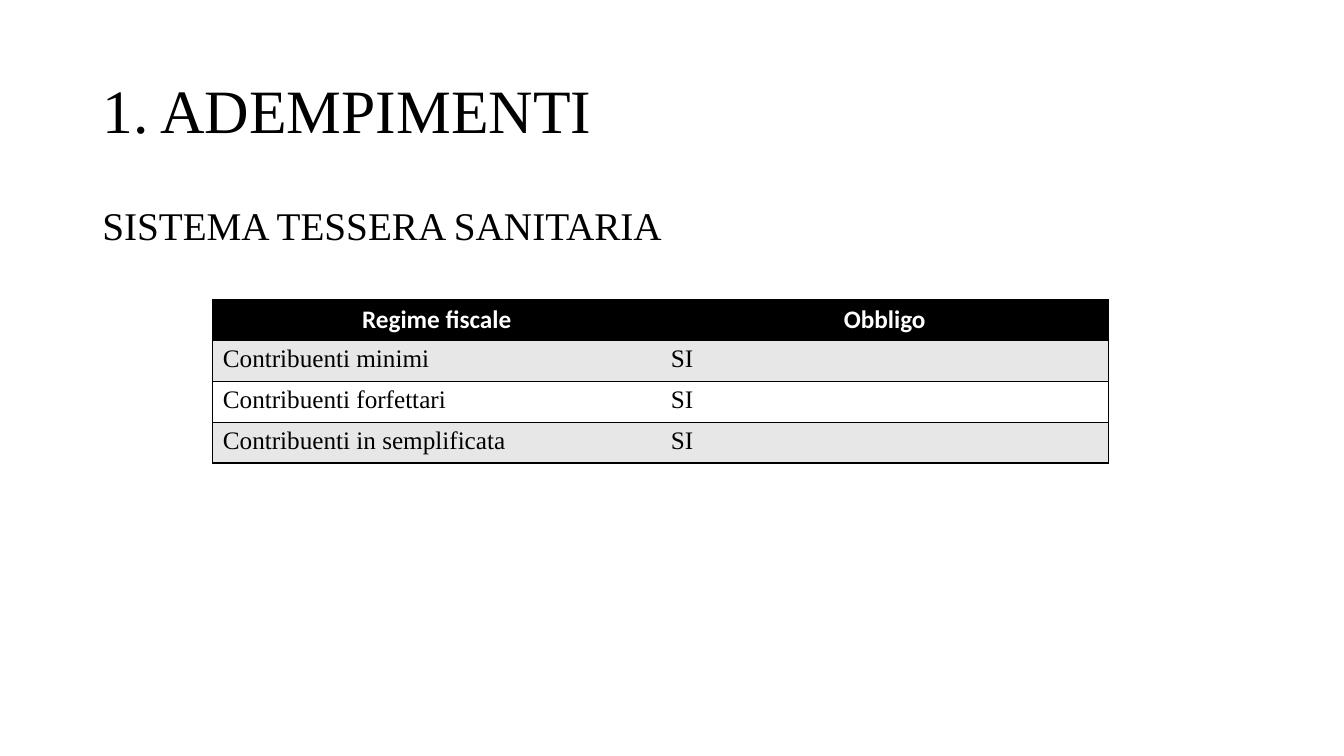
from dataclasses import dataclass

from lxml.etree import SubElement
from pptx import Presentation
from pptx.dml.color import RGBColor
from pptx.enum.text import MSO_ANCHOR, PP_ALIGN
from pptx.oxml.ns import qn
from pptx.slide import Slide
from pptx.table import _Cell
from pptx.text.text import Font
from pptx.util import Pt

SERIF = "Times New Roman"
BLACK, WHITE, GREY = "000000", "FFFFFF", "E7E7E7"


@dataclass
class Heading:
    text: str
    top: float
    height: float
    size: float
    space_before: float
    anchor: MSO_ANCHOR


@dataclass
class RowStyle:
    fill: str
    color: str
    font: str
    bold: bool
    align: PP_ALIGN


HEADINGS = [
    Heading("1. ADEMPIMENTI", 28.8, 104.4, 44, 0, MSO_ANCHOR.MIDDLE),
    Heading("SISTEMA TESSERA SANITARIA", 144, 342.7, 28, 10, MSO_ANCHOR.TOP),
]
OBLIGATIONS = [
    ("Regime fiscale", "Obbligo"),
    ("Contribuenti minimi", "SI"),
    ("Contribuenti forfettari", "SI"),
    ("Contribuenti in semplificata", "SI"),
]
HEADER = RowStyle(BLACK, WHITE, "Calibri", True, PP_ALIGN.CENTER)
ODD_ROW = RowStyle(GREY, BLACK, SERIF, False, PP_ALIGN.LEFT)
EVEN_ROW = RowStyle(WHITE, BLACK, SERIF, False, PP_ALIGN.LEFT)


def rgb(color: str) -> RGBColor:
    return RGBColor.from_string(color)


def set_font(font: Font, name: str, size: float, color: str, bold: bool = False) -> None:
    font.name, font.size, font.bold = name, Pt(size), bold
    font.color.rgb = rgb(color)


def add_heading(slide: Slide, heading: Heading) -> None:
    box = slide.shapes.add_textbox(Pt(66), Pt(heading.top), Pt(828), Pt(heading.height))
    frame = box.text_frame
    frame.word_wrap = True
    frame.vertical_anchor = heading.anchor
    paragraph = frame.paragraphs[0]
    paragraph.text = heading.text
    paragraph.line_spacing = 0.9
    paragraph.space_before = Pt(heading.space_before)
    set_font(paragraph.font, SERIF, heading.size, BLACK)


def set_borders(cell: _Cell, drawn: str) -> None:
    """Draw the sides listed in drawn (L, R, T, B) and clear the others."""
    properties = cell._tc.get_or_add_tcPr()
    for position, side in enumerate("LRTB"):
        line = SubElement(properties, qn(f"a:ln{side}"), w=str(Pt(1)))
        properties.insert(position, line)
        if side in drawn:
            fill = SubElement(line, qn("a:solidFill"))
            SubElement(fill, qn("a:srgbClr"), val=BLACK)
        else:
            SubElement(line, qn("a:noFill"))


def style_cell(cell: _Cell, text: str, style: RowStyle) -> None:
    cell.fill.solid()
    cell.fill.fore_color.rgb = rgb(style.fill)
    paragraph = cell.text_frame.paragraphs[0]
    paragraph.text = text
    paragraph.alignment = style.align
    set_font(paragraph.font, style.font, 18, style.color, style.bold)


def add_obligations(slide: Slide) -> None:
    row_height = 29.2
    table = slide.shapes.add_table(
        len(OBLIGATIONS), 2, Pt(152), Pt(214), Pt(640), Pt(row_height * len(OBLIGATIONS))
    ).table
    for r, texts in enumerate(OBLIGATIONS):
        table.rows[r].height = Pt(row_height)
        style = HEADER if r == 0 else ODD_ROW if r % 2 else EVEN_ROW
        for c, text in enumerate(texts):
            cell = table.cell(r, c)
            style_cell(cell, text, style)
            set_borders(cell, "LTB" if c == 0 else "RTB")


def main() -> None:
    presentation = Presentation()
    presentation.slide_width, presentation.slide_height = Pt(960), Pt(540)
    slide = presentation.slides.add_slide(presentation.slide_layouts[6])

    # Title and subject
    for heading in HEADINGS:
        add_heading(slide, heading)

    # Obligation by tax regime
    add_obligations(slide)

    presentation.save("out.pptx")


if __name__ == "__main__":
    main()
